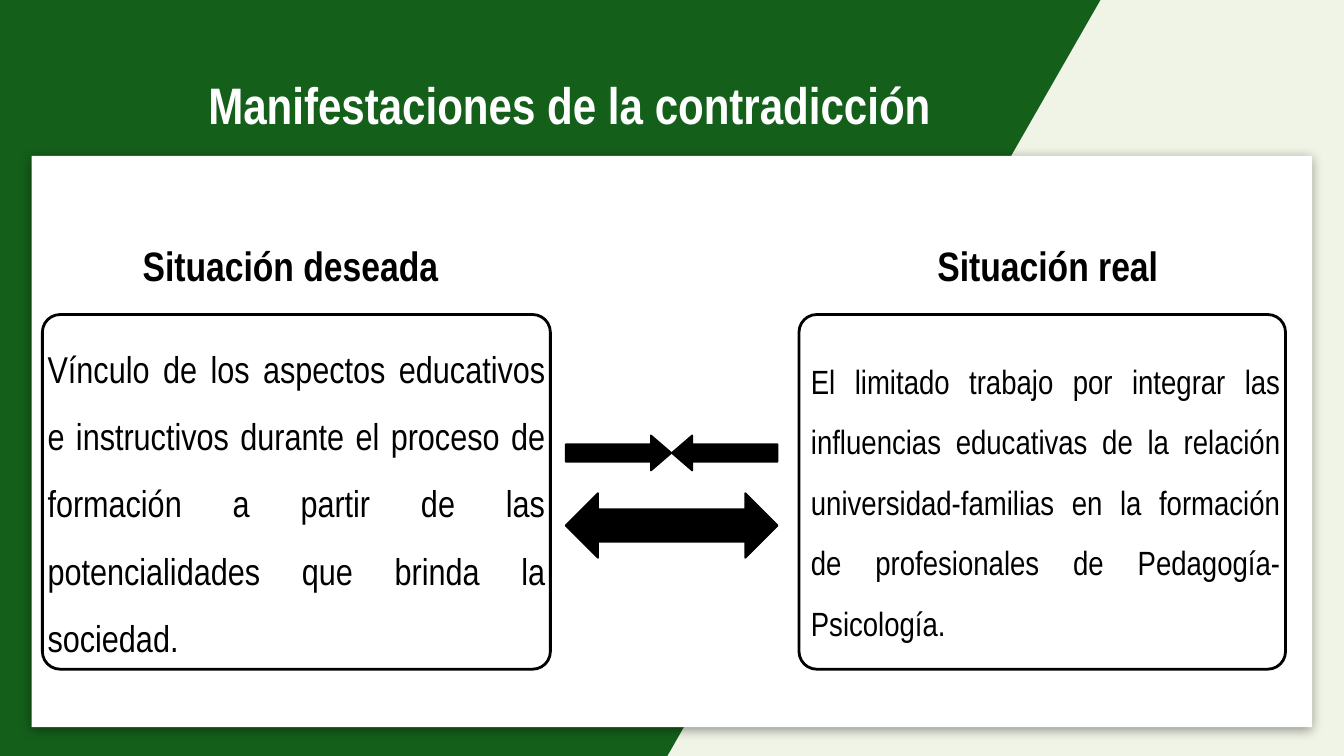
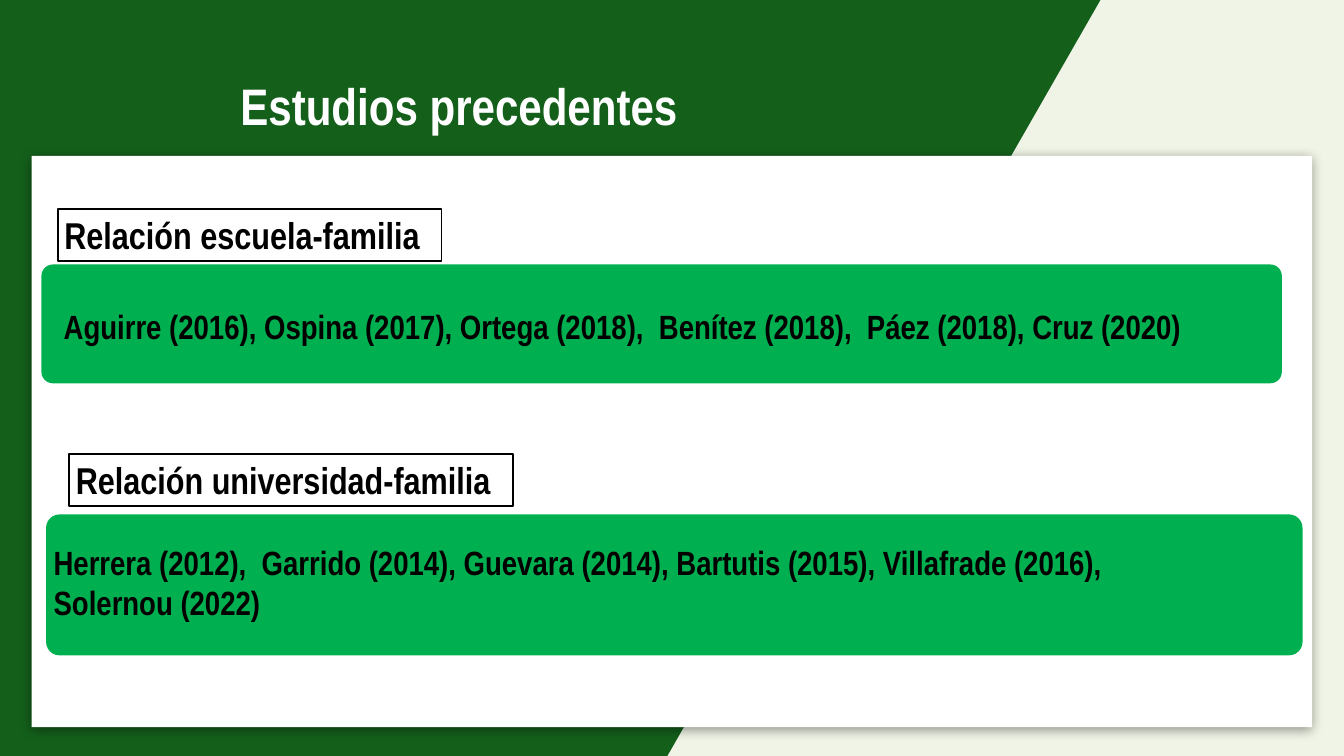
"""Build two slides on the contradiction and on earlier studies."""
import dataclasses

import lxml.etree
import pptx
import pptx.dml.color
import pptx.enum.shapes
import pptx.enum.text
import pptx.oxml.ns
import pptx.util

Pt = pptx.util.Pt
Form = pptx.enum.shapes.MSO_SHAPE
Align = pptx.enum.text.PP_ALIGN
Anchor = pptx.enum.text.MSO_ANCHOR


@dataclasses.dataclass(frozen=True)
class Theme:
    font: str = "Arial Narrow"
    ground: str = "F0F4E6"
    band: str = "14601B"
    card: str = "00B050"
    white: str = "FFFFFF"
    black: str = "000000"
    title: int = 55
    head: int = 44
    label: int = 40
    body: int = 36


theme = Theme()


def write(frame, text, size=theme.body, color=theme.black, bold=True,
          align=Align.JUSTIFY, space=None, before=0, after=0, indent=0,
          anchor=Anchor.TOP, sides=7.2):
    """Fill a text frame, one paragraph for each line of text."""
    frame.word_wrap = True
    frame.auto_size = pptx.enum.text.MSO_AUTO_SIZE.NONE
    frame.vertical_anchor = anchor
    frame.margin_left = frame.margin_right = Pt(sides)
    frame.margin_top = frame.margin_bottom = Pt(3.6)
    for row, line in enumerate(text.split("\n")):
        para = frame.add_paragraph() if row else frame.paragraphs[0]
        para.alignment = align
        para.line_spacing = space
        para.space_before, para.space_after = Pt(before), Pt(after)
        props = para._p.get_or_add_pPr()
        props.set("marL", str(Pt(indent)))
        props.set("indent", "0")
        run = para.add_run()
        run.text = line
        run.font.name, run.font.size, run.font.bold = theme.font, Pt(size), bold
        run.font.color.rgb = pptx.dml.color.RGBColor.from_string(color)


def paint(shape, fill=None, line=None, width=2):
    """Set the fill and line of a shape and take off its shadow."""
    shape.shadow.inherit = False
    if fill:
        shape.fill.solid()
        shape.fill.fore_color.rgb = pptx.dml.color.RGBColor.from_string(fill)
    else:
        shape.fill.background()
    if line:
        shape.line.color.rgb = pptx.dml.color.RGBColor.from_string(line)
        shape.line.width = Pt(width)
    else:
        shape.line.fill.background()
    return shape


deck = pptx.Presentation()
deck.slide_width, deck.slide_height = Pt(1440), Pt(810)
layout = deck.slide_layouts[5]
layout.background.fill.solid()
layout.background.fill.fore_color.rgb = pptx.dml.color.RGBColor.from_string(theme.ground)

slides = []
for title, box in (
    ("Manifestaciones de la contradicción", (133.2, 64.8, 946.8, 89.3)),
    ("Estudios precedentes", (16.6, 70.6, 943.2, 79.2)),
):
    slide = deck.slides.add_slide(layout)
    head = slide.shapes.title
    head.left, head.top, head.width, head.height = map(Pt, box)
    write(head.text_frame, title, size=theme.title, color=theme.white,
          align=Align.CENTER, space=1.07, indent=7.2, anchor=Anchor.MIDDLE)
    slides.append(slide)
clash, studies = (slide.shapes for slide in slides)

pen = clash.build_freeform(0, 0)
pen.add_line_segments([(Pt(1179), 0), (Pt(715), Pt(810)), (0, Pt(810))])
band = paint(pen.convert_to_shape(), theme.band)
panel = paint(clash.add_shape(Form.RECTANGLE, Pt(34), Pt(167), Pt(1372), Pt(612)), theme.white)
glow = lxml.etree.SubElement(
    panel.element.spPr.find(pptx.oxml.ns.qn("a:effectLst")), pptx.oxml.ns.qn("a:outerShdw"),
    blurRad=str(Pt(12)), dist=str(Pt(3)), dir="5400000", algn="t", rotWithShape="0")
tint = lxml.etree.SubElement(glow, pptx.oxml.ns.qn("a:srgbClr"), val=theme.black)
lxml.etree.SubElement(tint, pptx.oxml.ns.qn("a:alpha"), val="40000")
for place, shape in enumerate((band, panel)):
    shape.element.nvSpPr.cNvPr.set("id", str(100 + place))
    layout.shapes.element.insert(2 + place, shape.element)

for name, name_left, name_width, left, width, size, indent, text in (
    ("Situación deseada", 94.3, 434.2, 45.4, 544.3, theme.label, 0,
     "Vínculo de los aspectos educativos e instructivos durante el proceso de formación "
     "a partir de las potencialidades que brinda la sociedad."),
    ("Situación real", 958.3, 329, 856.1, 521.3, theme.body, 7.2,
     "El limitado trabajo por integrar las influencias educativas de la relación "
     "universidad-familias en la formación de profesionales de Pedagogía-Psicología."),
):
    head = clash.add_textbox(Pt(name_left), Pt(254.2), Pt(name_width), Pt(60.5))
    write(head.text_frame, name, size=theme.head, align=Align.CENTER)
    card = clash.add_shape(Form.ROUNDED_RECTANGLE, Pt(left), Pt(337), Pt(width), Pt(380))
    card.adjustments[0] = 0.05
    paint(card, line=theme.black, width=3)
    write(card.text_frame, text, size=size, bold=False, space=1.5, before=size / 2,
          indent=indent, anchor=Anchor.MIDDLE, sides=0)

for form, left, top, width, height, point in (
    (Form.RIGHT_ARROW, 606.2, 466.6, 113, 37.4, 0.58),
    (Form.LEFT_ARROW, 720, 466.6, 113, 37.4, 0.58),
    (Form.LEFT_RIGHT_ARROW, 606.2, 528.5, 226.8, 69.1, 0.5),
):
    arrow = clash.add_shape(form, Pt(left), Pt(top), Pt(width), Pt(height))
    arrow.adjustments[1] = point
    paint(arrow, theme.black, theme.black)

for label, label_box, card_box, names, names_box, spread in (
    ("Relación escuela-familia", (61.9, 223.9, 411.1, 56.2), (45.4, 284.4, 1327, 125.3),
     "Aguirre (2016), Ospina (2017), Ortega (2018),  Benítez (2018),  Páez (2018), Cruz (2020)",
     (61.2, 303.1, 1293.8, 106.6), {"space": 1.5, "before": 6, "after": 6}),
    ("Relación universidad-familia", (74.2, 486, 475.9, 56.2), (50.4, 552.2, 1344.2, 149),
     "Herrera (2012),  Garrido (2014), Guevara (2014), Bartutis (2015), Villafrade (2016),\n"
     "Solernou (2022)",
     (50.4, 576.7, 1327, 218.2), {}),
):
    tag = paint(studies.add_shape(Form.RECTANGLE, *map(Pt, label_box)), theme.white, theme.black)
    write(tag.text_frame, label, size=theme.label)
    card = studies.add_shape(Form.ROUNDED_RECTANGLE, *map(Pt, card_box))
    card.adjustments[0] = 0.09
    paint(card, theme.card, theme.card)
    write(studies.add_textbox(*map(Pt, names_box)).text_frame, names, **spread)

deck.save("out.pptx")
